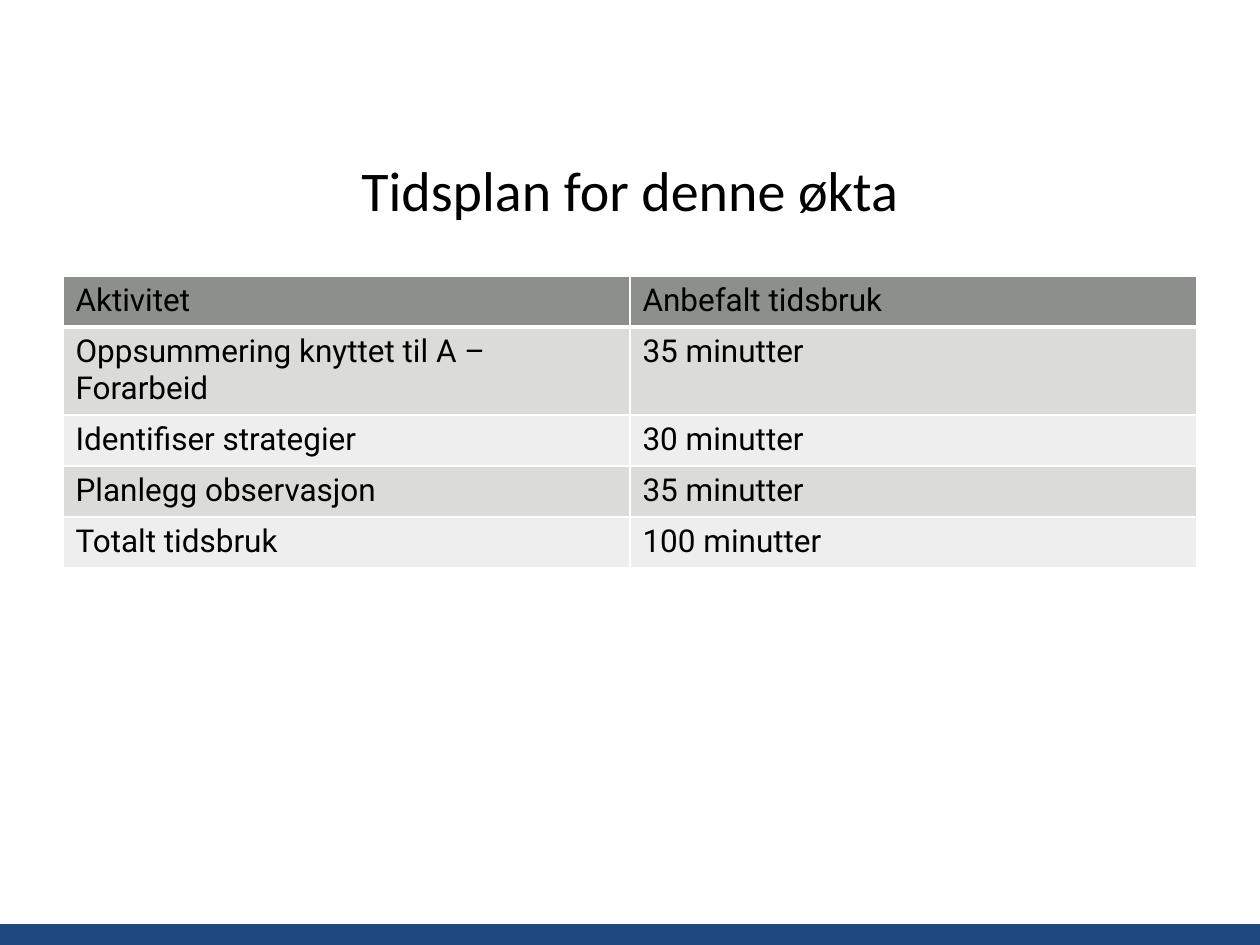
from lxml import etree
from pptx import Presentation
from pptx.dml.color import RGBColor
from pptx.enum.shapes import MSO_SHAPE
from pptx.enum.text import MSO_ANCHOR, PP_ALIGN
from pptx.oxml.ns import qn
from pptx.util import Pt

EMU_PER_PX = 7257.6  # 126 px to the inch
SLIDE_W, SLIDE_H = 1260, 945
MARGIN = 63
CONTENT_W = SLIDE_W - 2 * MARGIN
ROW_H = 51

RECTANGLE = MSO_SHAPE.RECTANGLE
MIDDLE = MSO_ANCHOR.MIDDLE
CENTER = PP_ALIGN.CENTER

BLACK = RGBColor(0x00, 0x00, 0x00)
WHITE = RGBColor(0xFF, 0xFF, 0xFF)
FOOTER_BLUE = RGBColor(0x1F, 0x48, 0x7E)
HEADER_GREY = RGBColor(0x8D, 0x8F, 0x8C)
BAND_GREYS = (RGBColor(0xDB, 0xDB, 0xDA), RGBColor(0xEE, 0xEE, 0xEE))

TITLE_FONT = {"name": "Calibri", "size": Pt(32)}
TABLE_FONT = {"name": "Roboto", "size": Pt(18)}

SCHEDULE = [
    ("Aktivitet", "Anbefalt tidsbruk"),
    ("Oppsummering knyttet til A – Forarbeid", "35 minutter"),
    ("Identifiser strategier", "30 minutter"),
    ("Planlegg observasjon", "35 minutter"),
    ("Totalt tidsbruk", "100 minutter"),
]


def px(*lengths):
    return [round(length * EMU_PER_PX) for length in lengths]


def write_text(frame, text, font_format):
    paragraph = frame.paragraphs[0]
    run = paragraph.add_run()
    run.text = text
    for attribute, value in font_format.items():
        setattr(run.font, attribute, value)
    run.font.color.rgb = BLACK
    return paragraph


def add_footer_bar(slide, height):
    bar = slide.shapes.add_shape(
        RECTANGLE, *px(0, SLIDE_H - height, SLIDE_W, height))
    bar.shadow.inherit = False
    bar.fill.solid()
    bar.fill.fore_color.rgb = FOOTER_BLUE
    bar.line.fill.background()


def add_title(slide, text, top, height):
    title = slide.shapes.add_textbox(*px(MARGIN, top, CONTENT_W, height))
    frame = title.text_frame
    frame.word_wrap = True
    frame.vertical_anchor = MIDDLE
    write_text(frame, text, TITLE_FONT).alignment = CENTER


def set_cell_borders(cell, bottom_width):
    properties = cell._tc.get_or_add_tcPr()
    widths = {"a:lnL": 1, "a:lnR": 1, "a:lnT": 1, "a:lnB": bottom_width}
    for tag, width in widths.items():
        line = etree.SubElement(properties, qn(tag), w=str(Pt(width)))
        fill = etree.SubElement(line, qn("a:solidFill"))
        etree.SubElement(fill, qn("a:srgbClr"), val=str(WHITE))


def add_schedule(slide, rows, top):
    columns = len(rows[0])
    table = slide.shapes.add_table(
        len(rows), columns,
        *px(MARGIN, top, CONTENT_W, ROW_H * len(rows))).table
    for row_index, row in enumerate(rows):
        is_header = row_index == 0
        row_fill = HEADER_GREY if is_header else BAND_GREYS[(row_index - 1) % 2]
        for column_index, text in enumerate(row):
            cell = table.cell(row_index, column_index)
            write_text(cell.text_frame, text, TABLE_FONT)
            set_cell_borders(cell, bottom_width=3 if is_header else 1)
            cell.fill.solid()
            cell.fill.fore_color.rgb = row_fill


def main():
    presentation = Presentation()
    presentation.slide_width, presentation.slide_height = px(SLIDE_W, SLIDE_H)
    slide = presentation.slides.add_slide(presentation.slide_layouts[6])

    # Blue bar along the bottom edge
    add_footer_bar(slide, height=21)
    # Heading and session schedule
    add_title(slide, "Tidsplan for denne økta", top=126, height=127)
    add_schedule(slide, SCHEDULE, top=276)

    presentation.save("out.pptx")


if __name__ == "__main__":
    main()
